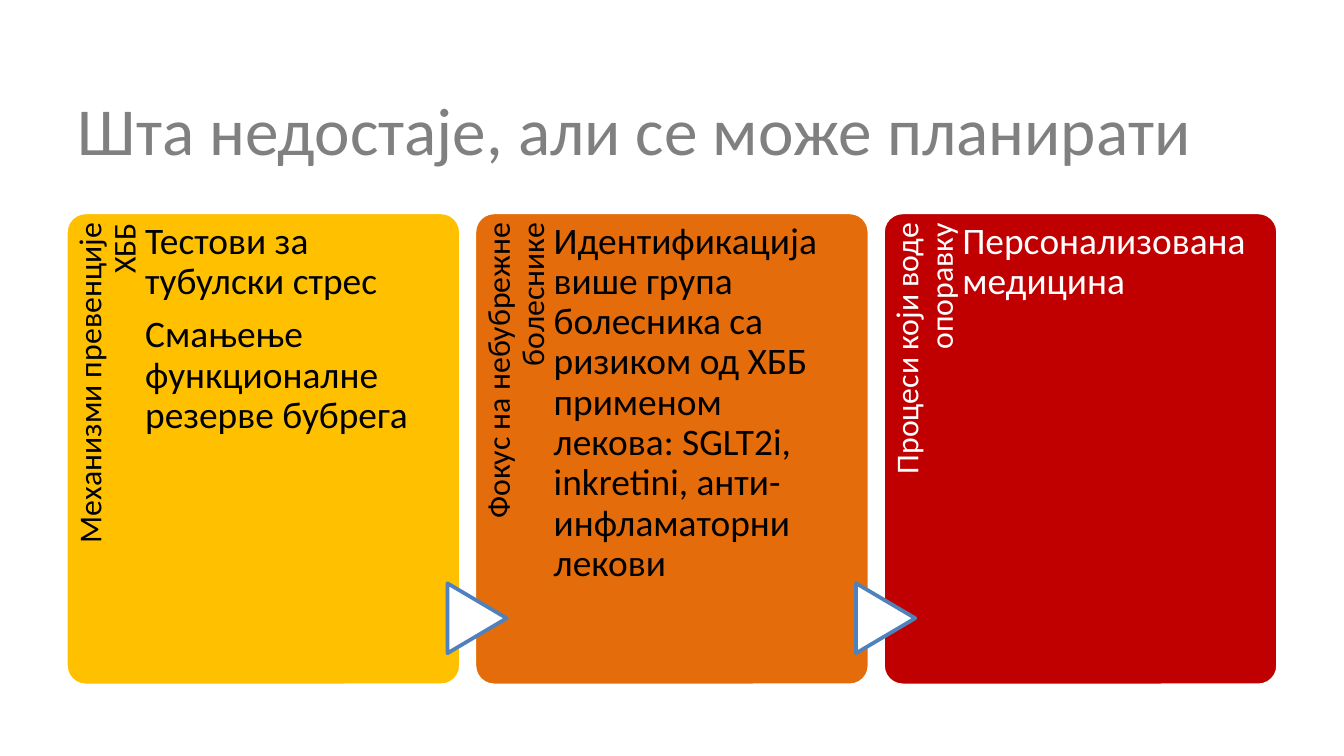
from pptx import Presentation
from pptx.dml.color import RGBColor as Rgb
from pptx.enum.shapes import MSO_SHAPE as Kind
from pptx.enum.text import MSO_ANCHOR as Anchor, PP_ALIGN as Align
from pptx.util import Inches, Pt

HUES = {"gray": "808080", "gold": "FFC000", "orange": "E46C0A", "red": "C00000",
        "blue": "4F81BD", "white": "FFFFFF", "black": "000000"}

deck = Presentation()
deck.slide_width = Inches(10)
deck.slide_height = Inches(10 * 9 / 16)
slide = deck.slides.add_slide(deck.slide_layouts[6])


def add_text(box, pad, lines, size, hue, align=Align.LEFT, anchor=Anchor.TOP, space=0.9, after=0):
    area = slide.shapes.add_textbox(*map(Inches, box))
    frame = area.text_frame
    frame.word_wrap = True
    frame.vertical_anchor = anchor
    (frame.margin_left, frame.margin_top,
     frame.margin_right, frame.margin_bottom) = map(Inches, pad)
    for i, line in enumerate(lines):
        para = frame.paragraphs[0] if i == 0 else frame.add_paragraph()
        para.alignment = align
        para.line_spacing = space
        para.space_after = Pt(after)
        run = para.add_run()
        run.text = line
        run.font.name = "Calibri"
        run.font.size = Pt(size)
        run.font.color.rgb = Rgb.from_string(HUES[hue])
    return area


def add_form(kind, box, fill, edge):
    form = slide.shapes.add_shape(kind, *map(Inches, box))
    form.shadow.inherit = False
    form.fill.solid()
    form.fill.fore_color.rgb = Rgb.from_string(HUES[fill])
    form.line.color.rgb = Rgb.from_string(HUES[edge])
    form.line.width = Pt(2)
    return form


add_text((0.48, 0.54, 9.02, 0.84), (0.1, 0.05, 0.1, 0.05),
         ["Шта недостаје, али се може планирати"], 36, "gray",
         anchor=Anchor.MIDDLE, space=1.0)

cards = [
    ("gold", "black", "Механизми превенције ХББ",
     ["Тестови за тубулски стрес", "Смањење функционалне резерве бубрега"]),
    ("orange", "black", "Фокус на небубрежне болеснике",
     ["Идентификација више група болесника са ризиком од ХББ применом лекова: "
      "SGLT2i, inkretini, анти-инфламаторни лекови"]),
    ("red", "white", "Процеси који воде опоравку", ["Персонализована медицина"]),
]
top, high, step = 1.58, 3.52, 3.04

for i, (fill, ink, head, body) in enumerate(cards):
    left = 0.49 + i * step
    card = add_form(Kind.ROUNDED_RECTANGLE, (left, top, 2.94, high), fill, "white")
    card.adjustments[0] = 0.05
    label = add_text((left - 1.15, 2.73, 2.89, 0.59), (0.1, 0.06, 0.08, 0),
                     [head], 17, ink, align=Align.RIGHT)
    label.rotation = 270
    if i:
        arrow = add_form(Kind.FLOWCHART_EXTRACT, (left - 0.24, 4.38, 0.52, 0.44), "white", "blue")
        arrow.rotation = 90
    add_text((left + 0.59, top, 2.19, high), (0, 0.07, 0, 0), body, 20, ink, after=7)

deck.save("out.pptx")
